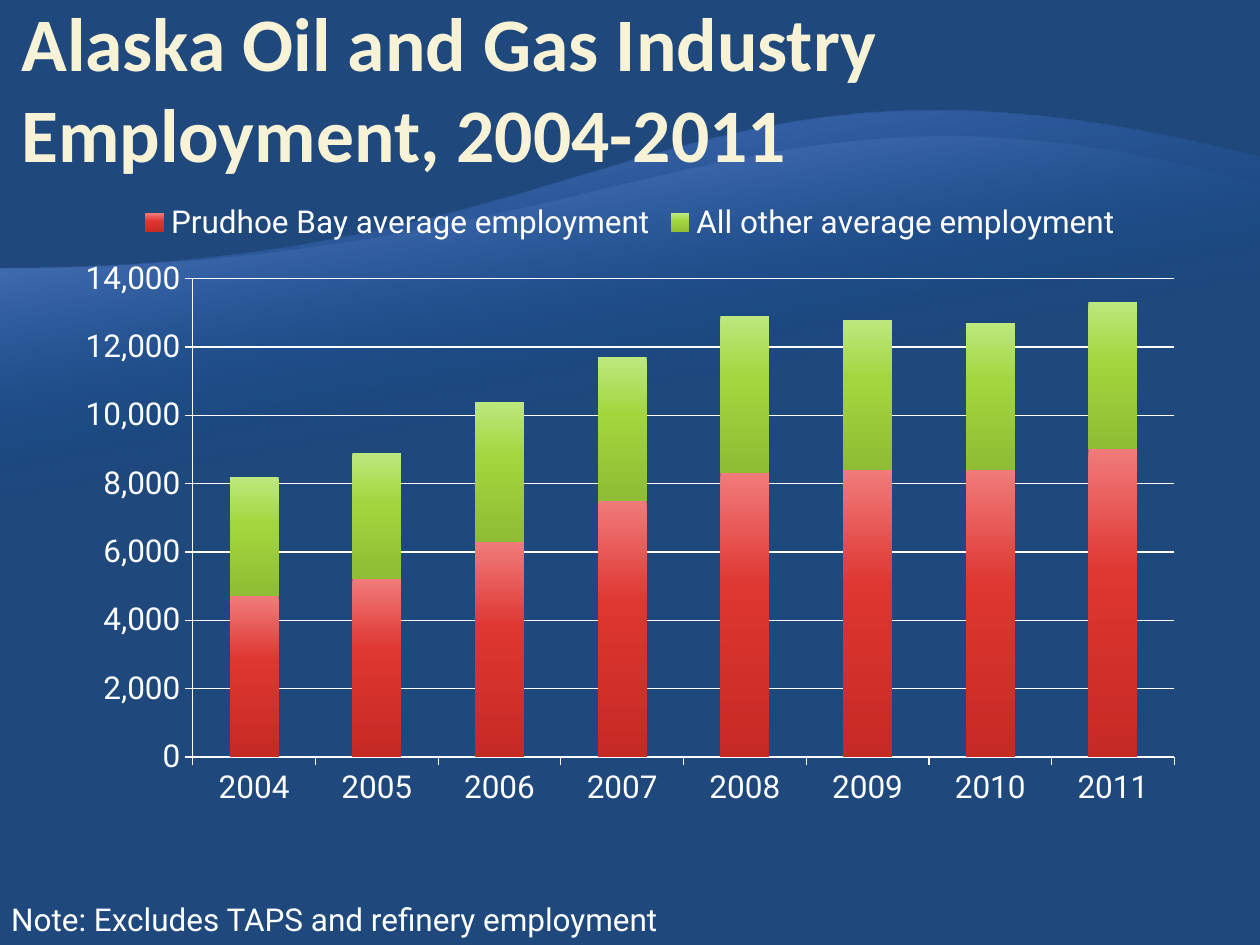
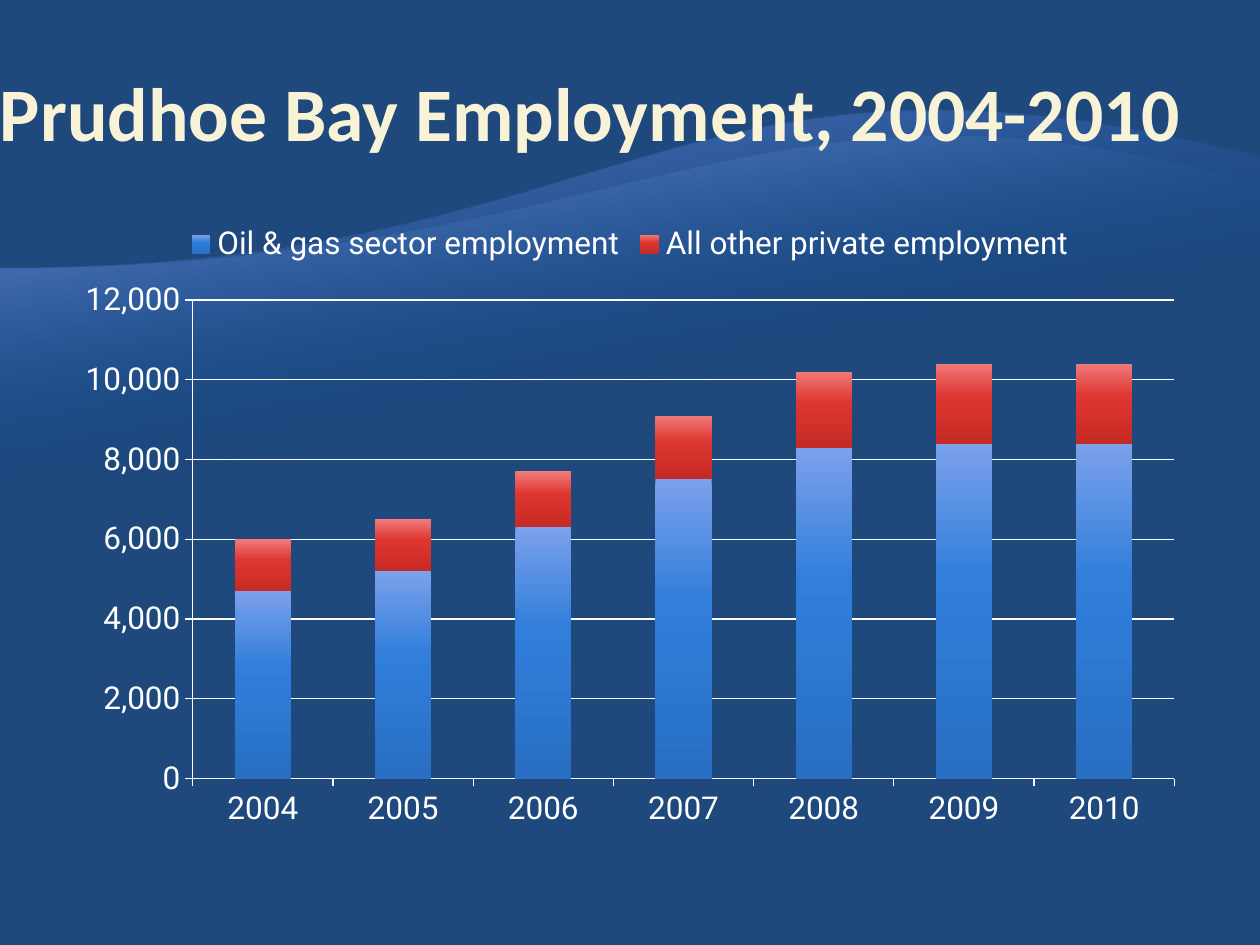
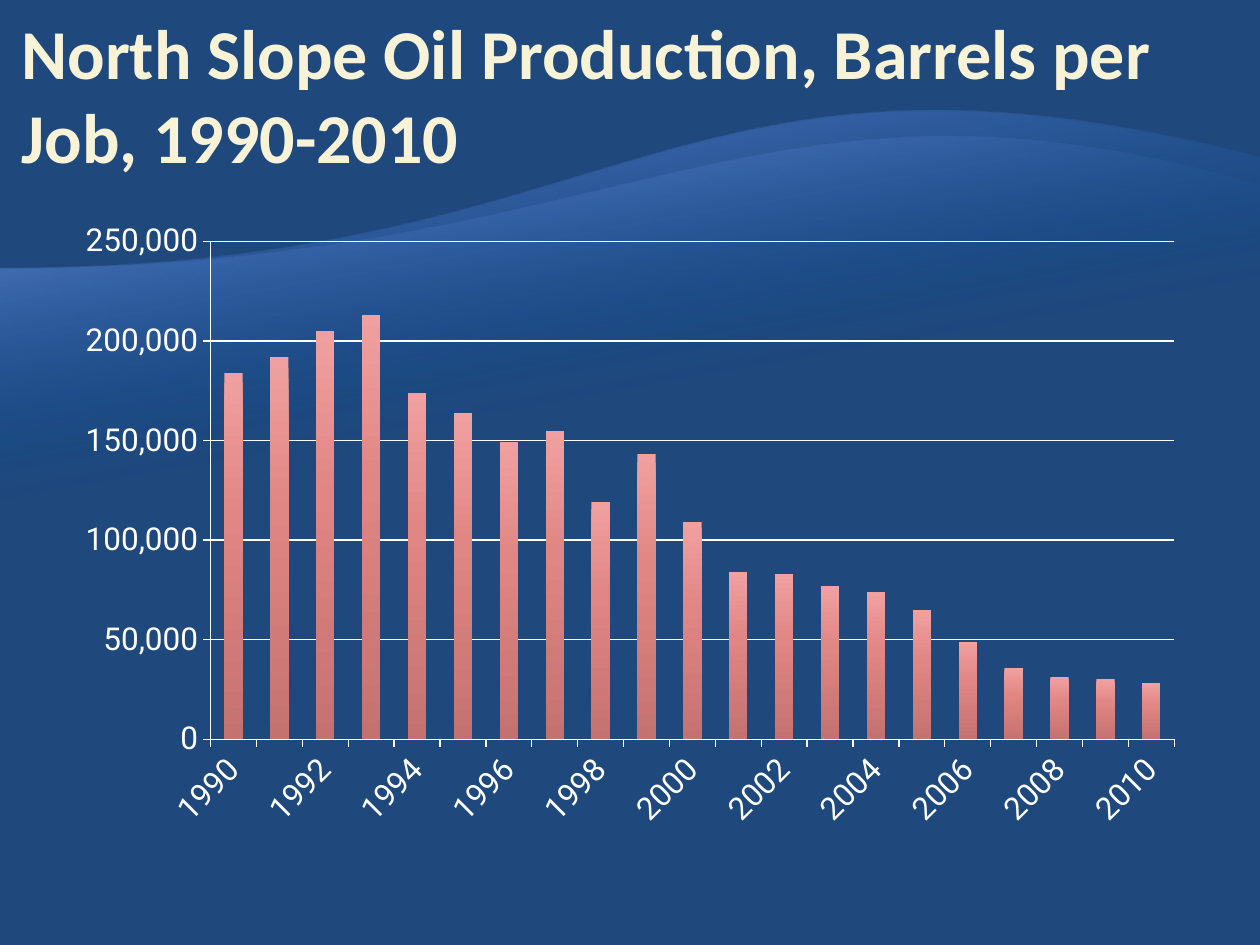
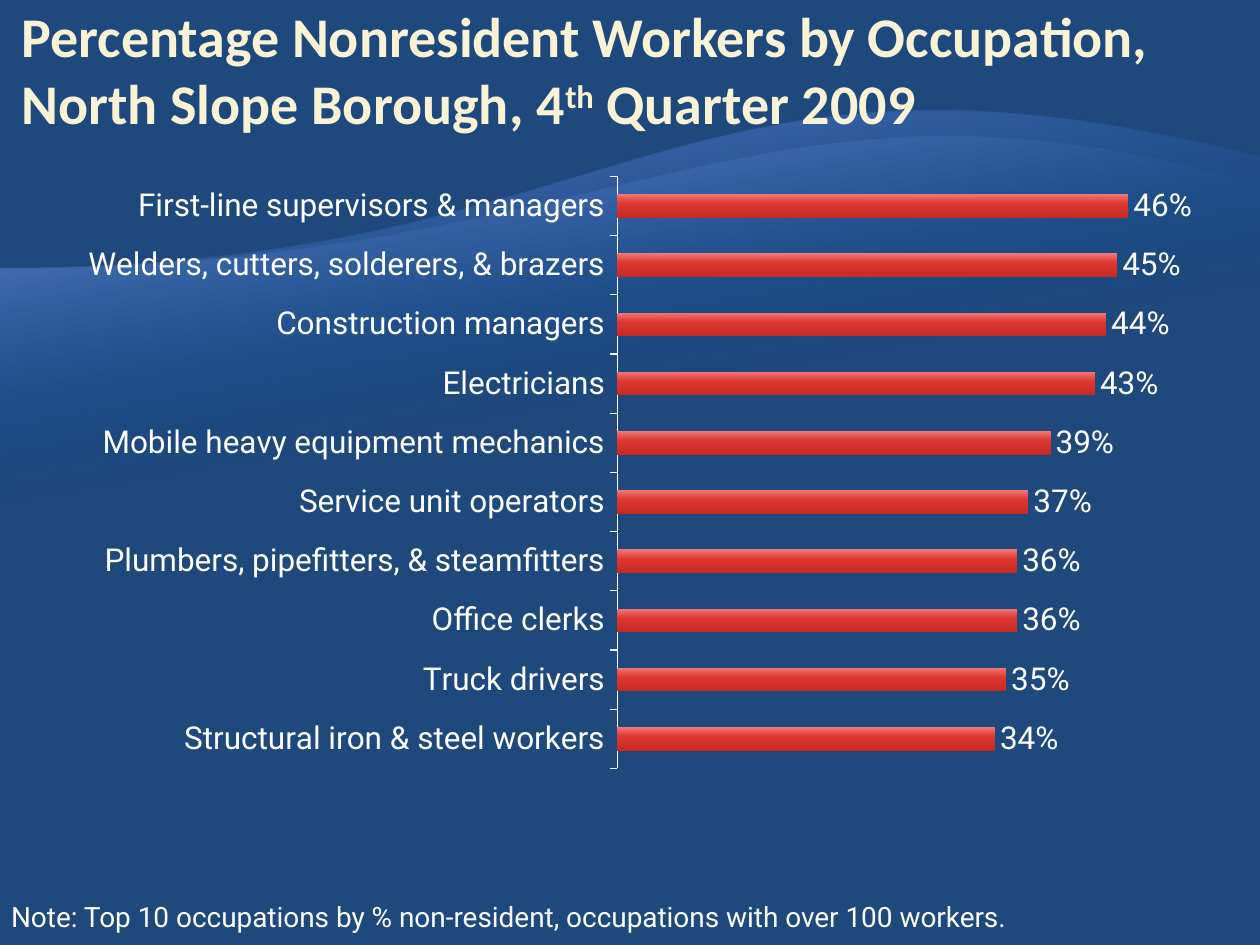
from pptx import Presentation
from pptx.chart.data import CategoryChartData
from pptx.dml.color import RGBColor
from pptx.enum.chart import XL_CHART_TYPE, XL_LABEL_POSITION, XL_LEGEND_POSITION, XL_TICK_MARK
from pptx.enum.text import MSO_ANCHOR, MSO_AUTO_SIZE
from pptx.oxml import parse_xml
from pptx.oxml.ns import nsdecls, qn
from pptx.util import Inches, Pt

COLORS = {"background": "1F497D", "title": "F8F3D7", "text": "FFFFFF"}
TITLE_FONT, BODY_FONT = "Calibri", "Roboto"

# Gradient stops: position %, colour, opacity %
BARS = {
    "red": [(0, "F07B7A", 100), (40, "DE3631", 100), (100, "C62A24", 100)],
    "green": [(0, "BDE87E", 100), (40, "A3D53D", 100), (100, "8FBD33", 100)],
    "blue": [(0, "7BA1EB", 100), (40, "317EDB", 100), (100, "286FC3", 100)],
    "pink": [(0, "F0A0A0", 100), (40, "E08684", 100), (100, "C47270", 100)],
}
WAVE_START = 2.13
WAVES = [
    {"top": 1.25, "bottom": 7.33, "control": (5.34, 0.05),
     "stops": [(65, "00469C", 0), (100, "7C9FFF", 55)]},
    {"top": 1.47, "bottom": 6.37, "control": (5.98, 0.31),
     "stops": [(65, "00469C", 0), (100, "A5BDFF", 30)]},
]

PRUDHOE_BAY = [4700, 5200, 6300, 7500, 8300, 8400, 8400]
OCCUPATIONS = [
    ("Structural iron & steel workers", 0.34),
    ("Truck drivers", 0.35),
    ("Office clerks", 0.36),
    ("Plumbers, pipefitters, & steamfitters", 0.36),
    ("Service unit operators", 0.37),
    ("Mobile heavy equipment mechanics", 0.39),
    ("Electricians", 0.43),
    ("Construction managers", 0.44),
    ("Welders, cutters, solderers, & brazers", 0.45),
    ("First-line supervisors & managers", 0.46),
]


def years(first, last):
    return [str(year) for year in range(first, last + 1)]


# Title spans are (text, superscript); "at" and "title_at" are left, top
SLIDES = [
    {
        "title": [("Alaska Oil and Gas Industry Employment, 2004-2011", False)],
        "title_at": (0.17, 0.5), "title_size": 43.2,
        "chart": {
            "type": XL_CHART_TYPE.COLUMN_STACKED, "at": (0.5, 1.5),
            "maximum": 14000, "step": 2000, "categories": years(2004, 2011),
            "series": [
                ("Prudhoe Bay average employment", "red", PRUDHOE_BAY + [9000]),
                ("All other average employment", "green",
                 [3500, 3700, 4100, 4200, 4600, 4400, 4300, 4300]),
            ],
        },
        "note": ("Note: Excludes TAPS and refinery employment", 18, 5.41),
    },
    {
        "title": [("Prudhoe Bay Employment, 2004-2010", False)],
        "title_at": (0, 0.33), "title_size": 43.2,
        "chart": {
            "type": XL_CHART_TYPE.COLUMN_STACKED, "at": (0.5, 1.67),
            "maximum": 12000, "step": 2000, "categories": years(2004, 2010),
            "series": [
                ("Oil & gas sector employment", "blue", PRUDHOE_BAY),
                ("All other private employment", "red",
                 [1300, 1300, 1400, 1600, 1900, 2000, 2000]),
            ],
        },
    },
    {
        "title": [("North Slope Oil Production, Barrels per Job, 1990-2010", False)],
        "title_at": (0.17, 0.5), "title_size": 40,
        "chart": {
            "type": XL_CHART_TYPE.COLUMN_CLUSTERED, "at": (0.5, 1.67),
            "maximum": 250000, "step": 50000, "categories": years(1990, 2010),
            "label_angle": -45,
            "series": [
                ("Series 1", "pink",
                 [184000, 192000, 205000, 213000, 174000, 164000, 149000,
                  155000, 119000, 143000, 109000, 84000, 83000, 77000,
                  74000, 65000, 49000, 36000, 31000, 30000, 28000]),
            ],
        },
    },
    {
        "title": [
            ("Percentage Nonresident Workers by Occupation, North Slope Borough, 4", False),
            ("th", True),
            (" Quarter 2009", False),
        ],
        "title_at": (0.17, 0.17), "title_size": 32,
        "chart": {
            "type": XL_CHART_TYPE.BAR_CLUSTERED, "at": (0.58, 1.25),
            "maximum": 0.5, "step": 0.1, "percent": True,
            "plot": {"x": 0.48, "y": 0.03, "w": 0.49, "h": 0.94},
            "categories": [name for name, share in OCCUPATIONS],
            "series": [("Series 1", "red", [share for name, share in OCCUPATIONS])],
        },
        "note": ("Note: Top 10 occupations by % non-resident, "
                 "occupations with over 100 workers.", 16, 8.36),
    },
]


def style_font(font, name, size, color, bold=False):
    font.name, font.size, font.bold = name, Pt(size), bold
    font.color.rgb = RGBColor.from_string(COLORS[color])


def fill_gradient(fill, properties, stops, angle):
    """Give a shape or series a linear gradient with opacity per stop."""
    fill.solid()
    stop_xml = "".join(
        f'<a:gs pos="{position * 1000}"><a:srgbClr val="{color}">'
        f'<a:alpha val="{opacity * 1000}"/></a:srgbClr></a:gs>'
        for position, color, opacity in stops)
    gradient = parse_xml(
        f'<a:gradFill {nsdecls("a")} rotWithShape="1"><a:gsLst>{stop_xml}</a:gsLst>'
        f'<a:lin ang="{angle * 60000}" scaled="0"/></a:gradFill>')
    properties.replace(properties.find(qn("a:solidFill")), gradient)


def add_wave(page, top, bottom, control, stops):
    """Draw a wave upside down and turn it, so its gradient rises."""
    width, left_edge = Inches(10), Inches(bottom - WAVE_START)
    right_edge = Inches(bottom - top)
    builder = page.shapes.build_freeform(0, 0, scale=1.0)
    builder.add_line_segments([(width, 0), (width, left_edge), (0, right_edge)], close=True)
    wave = builder.convert_to_shape(0, Inches(top))
    crest = [(Inches(5), left_edge),
             (Inches(10 - control[0]), Inches(bottom - control[1])),
             (0, right_edge)]
    points = "".join(f'<a:pt x="{x}" y="{y}"/>' for x, y in crest)
    edge = wave.element.spPr.findall(".//" + qn("a:lnTo"))[-1]
    edge.getparent().replace(
        edge, parse_xml(f'<a:cubicBezTo {nsdecls("a")}>{points}</a:cubicBezTo>'))
    wave.rotation = 180
    wave.shadow.inherit = False
    wave.line.fill.background()
    fill_gradient(wave.fill, wave.element.spPr, stops, 80)
    return wave


def add_title(page, spans, at, size):
    box = page.shapes.add_textbox(Inches(at[0]), Inches(at[1]), Inches(9.83), Inches(0.92))
    frame = box.text_frame
    frame.word_wrap = True
    frame.vertical_anchor = MSO_ANCHOR.BOTTOM
    frame.margin_left = frame.margin_right = 0
    frame.margin_top = frame.margin_bottom = Inches(0.01)
    para = frame.paragraphs[0]
    style_font(para.font, TITLE_FONT, size, "title", bold=True)
    for text, superscript in spans:
        span = para.add_run()
        span.text = text
        if superscript:
            span._r.get_or_add_rPr().set("baseline", "30000")


def add_note(page, text, size, width):
    box = page.shapes.add_textbox(Inches(-0.01), Inches(7.09), Inches(width), Inches(0.4))
    frame = box.text_frame
    frame.word_wrap = False
    frame.auto_size = MSO_AUTO_SIZE.SHAPE_TO_FIT_TEXT
    para = frame.paragraphs[0]
    para.text = text
    style_font(para.font, BODY_FONT, size, "text")


def place_plot(chart, bounds):
    plot_area = chart.element.chart.plotArea
    for layout in plot_area.findall(qn("c:layout")):
        plot_area.remove(layout)
    sizes = "".join(f'<c:{side} val="{value}"/>' for side, value in bounds.items())
    plot_area.insert(0, parse_xml(
        f'<c:layout {nsdecls("c")}><c:manualLayout><c:layoutTarget val="inner"/>'
        f'<c:xMode val="edge"/><c:yMode val="edge"/>{sizes}</c:manualLayout></c:layout>'))


def style_line(line):
    line.color.rgb = RGBColor.from_string(COLORS["text"])
    line.width = Pt(0.75)


def add_bar_chart(page, content):
    percent = content.get("percent", False)
    number_format = "0%" if percent else "#,##0"
    data = CategoryChartData(number_format=number_format)
    data.categories = content["categories"]
    for name, color, values in content["series"]:
        data.add_series(name, values)
    left, top = content["at"]
    chart = page.shapes.add_chart(content["type"], Inches(left), Inches(top),
                                  Inches(9), Inches(5), data).chart
    style_font(chart.font, BODY_FONT, 18, "text")
    chart.has_title = False
    chart.has_legend = len(content["series"]) > 1
    if chart.has_legend:
        chart.legend.position = XL_LEGEND_POSITION.TOP
        chart.legend.include_in_layout = False

    plot = chart.plots[0]
    plot.vary_by_categories = False
    plot.gap_width = 150
    for series, (name, color, values) in zip(plot.series, content["series"]):
        fill_gradient(series.format.fill, series.format.element.get_or_add_spPr(),
                      BARS[color], 90)

    value_axis, category_axis = chart.value_axis, chart.category_axis
    value_axis.minimum_scale, value_axis.maximum_scale = 0, content["maximum"]
    value_axis.major_unit = content["step"]
    value_axis.has_major_gridlines = not percent
    for axis in (value_axis, category_axis):
        axis.major_tick_mark = XL_TICK_MARK.OUTSIDE
        style_line(axis.format.line)
        style_font(axis.tick_labels.font, BODY_FONT, 18, "text")
    value_axis.tick_labels.number_format = number_format
    value_axis.tick_labels.number_format_is_linked = False
    if percent:
        value_axis.visible = False
        plot.has_data_labels = True
        labels = plot.data_labels
        labels.show_value = True
        labels.number_format, labels.number_format_is_linked = number_format, False
        labels.position = XL_LABEL_POSITION.OUTSIDE_END
        style_font(labels.font, BODY_FONT, 18, "text")
    else:
        style_line(value_axis.major_gridlines.format.line)
    if "label_angle" in content:
        category_axis.format.element.txPr.bodyPr.set(
            "rot", str(content["label_angle"] * 60000))
    if "plot" in content:
        place_plot(chart, content["plot"])


def main():
    deck = Presentation()
    deck.slide_width, deck.slide_height = Inches(10), Inches(7.5)
    blank = deck.slide_layouts[6]
    background = deck.slide_master.background.fill
    background.solid()
    background.fore_color.rgb = RGBColor.from_string(COLORS["background"])
    pages = [deck.slides.add_slide(blank) for _ in SLIDES]
    for wave in WAVES:
        # Moving the waves to the layout shares them among all pages
        blank.shapes.element.append(add_wave(pages[0], **wave).element)
    for page, content in zip(pages, SLIDES):
        add_title(page, content["title"], content["title_at"], content["title_size"])
        add_bar_chart(page, content["chart"])
        if "note" in content:
            add_note(page, *content["note"])
    deck.save("out.pptx")


if __name__ == "__main__":
    main()
